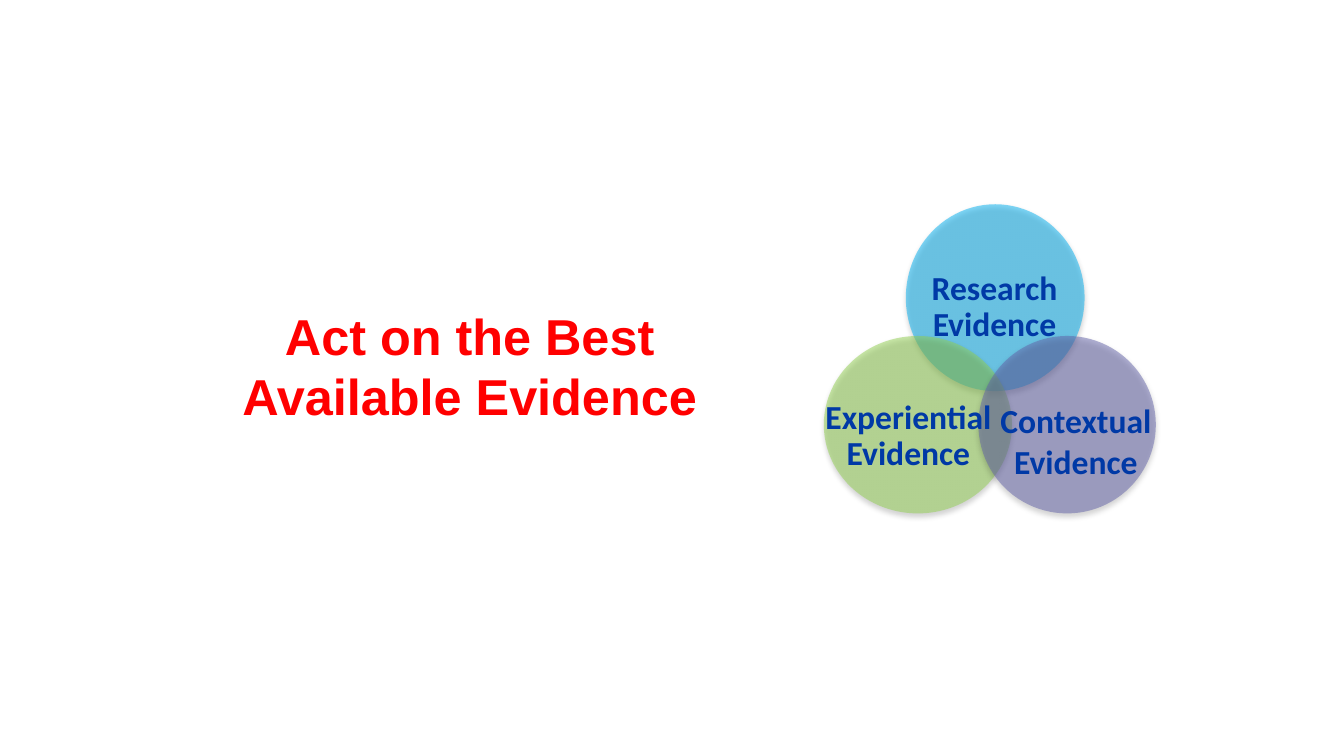
from dataclasses import dataclass

from lxml import etree
from pptx import Presentation
from pptx.dml.color import RGBColor
from pptx.enum.shapes import MSO_SHAPE
from pptx.enum.text import MSO_ANCHOR, MSO_AUTO_SIZE, PP_ALIGN
from pptx.oxml.ns import qn
from pptx.shapes.autoshape import Shape
from pptx.slide import Slide
from pptx.util import Inches, Pt

OVAL = MSO_SHAPE.OVAL
TOP = MSO_ANCHOR.TOP
GROW = MSO_AUTO_SIZE.SHAPE_TO_FIT_TEXT
CENTER = PP_ALIGN.CENTER


@dataclass(frozen=True)
class Theme:
    title_color: str = "FF0000"
    label_color: str = "0039A6"
    research: str = "00B0F0"
    experiential: str = "92D050"
    contextual: str = "6363A9"
    shadow: str = "000000"
    title_font: str = "Arial"
    label_font: str = "Calibri"
    title_size: int = 27
    label_size: int = 18
    circle_opacity: int = 50
    shadow_opacity: int = 35


@dataclass(frozen=True)
class Area:
    left: float
    top: float
    width: float
    height: float

    def lengths(self) -> list[Inches]:
        return [Inches(v) for v in (self.left, self.top, self.width, self.height)]


@dataclass(frozen=True)
class Evidence:
    name: str
    color: str
    circle: Area
    label: Area
    line_spacing: float


THEME = Theme()
SLIDE_WIDTH = Inches(10)
SLIDE_HEIGHT = SLIDE_WIDTH * 9 // 16
TITLE_AREA = Area(1.64, 2.22, 3.71, 1.01)
EVIDENCE = [
    Evidence("Research Evidence", THEME.research,
             Area(6.74, 1.52, 1.33, 1.39), Area(6.61, 1.97, 1.58, 0.65), 0.9),
    Evidence("Experiential Evidence", THEME.experiential,
             Area(6.13, 2.5, 1.4, 1.32), Area(5.96, 2.93, 1.6, 0.65), 0.9),
    Evidence("Contextual Evidence", THEME.contextual,
             Area(7.28, 2.5, 1.32, 1.32), Area(7.23, 2.93, 1.55, 0.71), 1.0),
]


def add_alpha(color_element: etree._Element, percent: int) -> None:
    etree.SubElement(color_element, qn("a:alpha"), val=str(percent * 1000))


def add_shadow(shape: Shape) -> None:
    """Cast a soft shadow straight down."""
    shape.shadow.inherit = False
    effects = shape._element.spPr.find(qn("a:effectLst"))
    shadow = etree.SubElement(
        effects, qn("a:outerShdw"), blurRad=str(Pt(3.1)), dist=str(Pt(1.8)),
        dir=str(90 * 60000), rotWithShape="0")
    color = etree.SubElement(shadow, qn("a:srgbClr"), val=THEME.shadow)
    add_alpha(color, THEME.shadow_opacity)


def add_circle(slide: Slide, evidence: Evidence) -> None:
    circle = slide.shapes.add_shape(OVAL, *evidence.circle.lengths())
    circle.fill.solid()
    circle.fill.fore_color.rgb = RGBColor.from_string(evidence.color)
    add_alpha(circle._element.spPr.find(f"{qn('a:solidFill')}/{qn('a:srgbClr')}"),
              THEME.circle_opacity)
    circle.line.fill.background()
    add_shadow(circle)


def add_text(slide: Slide, text: str, area: Area, font: str, size: int,
             color: str, line_spacing: float = 1.0) -> None:
    box = slide.shapes.add_textbox(*area.lengths())
    frame = box.text_frame
    para = frame.paragraphs[0]
    span = para.add_run()
    formats = [
        (frame, {"word_wrap": True, "auto_size": GROW, "vertical_anchor": TOP}),
        (para, {"alignment": CENTER, "line_spacing": line_spacing}),
        (span, {"text": text}),
        (span.font, {"name": font, "size": Pt(size), "bold": True}),
        (span.font.color, {"rgb": RGBColor.from_string(color)}),
    ]
    for target, values in formats:
        for name, value in values.items():
            setattr(target, name, value)


def main() -> None:
    deck = Presentation()
    deck.slide_width, deck.slide_height = SLIDE_WIDTH, SLIDE_HEIGHT
    slide = deck.slides.add_slide(deck.slide_layouts[6])

    # Title
    add_text(slide, "Act on the Best Available Evidence", TITLE_AREA,
             THEME.title_font, THEME.title_size, THEME.title_color)

    # Overlapping circles, then their labels on top
    for evidence in EVIDENCE:
        add_circle(slide, evidence)
    for evidence in EVIDENCE:
        add_text(slide, evidence.name, evidence.label, THEME.label_font,
                 THEME.label_size, THEME.label_color, evidence.line_spacing)

    deck.save("out.pptx")


if __name__ == "__main__":
    main()
